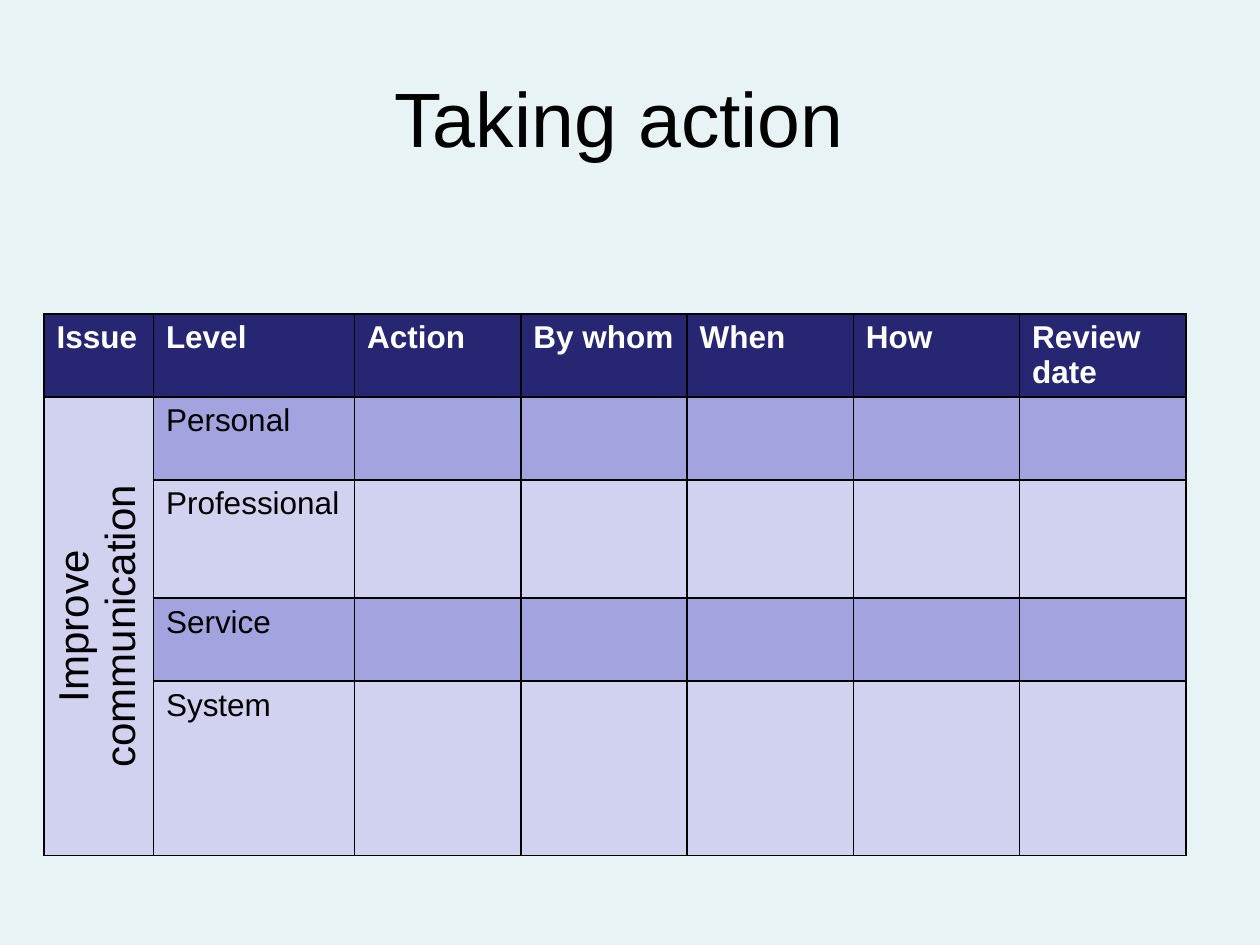
from typing import NamedTuple

from lxml.etree import SubElement
from pptx import Presentation
from pptx.dml.color import RGBColor as RGB
from pptx.enum.text import MSO_ANCHOR as Anchor, PP_ALIGN as Align
from pptx.oxml.ns import qn
from pptx.util import Pt

NAVY, MID, PALE = "262673", "A3A3E0", "D1D1F0"
WIDTHS = [62.5, 115] + [95] * 5
HEADS = ["Issue", "Level", "Action", "By whom", "When", "How", "Review date"]


class Level(NamedTuple):
    name: str
    height: float
    fill: str


LEVELS = [
    Level("Personal", 47.5, MID),
    Level("Professional", 67.5, PALE),
    Level("Service", 47.5, MID),
    Level("System", 99, PALE),
]
HEAD_H = 47.5


def paint(target, color: str) -> None:
    target.solid()
    target.fore_color.rgb = RGB.from_string(color)


def write(frame, text: str, size: float = 18, color: str = "000000",
          bold: bool = False, align=Align.LEFT) -> None:
    frame.text = text
    para = frame.paragraphs[0]
    para.alignment = align
    font = para.runs[0].font if para.runs else para.font
    font.name, font.size, font.bold = "Arial", Pt(size), bold
    paint(font.fill, color)


def frame_cell(cell, fill: str) -> None:
    """Give a cell thin black borders and a plain fill."""
    props = cell._tc.get_or_add_tcPr()
    for side in ("a:lnL", "a:lnR", "a:lnT", "a:lnB"):
        line = SubElement(props, qn(side), w=str(Pt(1)))
        solid = SubElement(line, qn("a:solidFill"))
        SubElement(solid, qn("a:srgbClr"), val="000000")
    paint(cell.fill, fill)


def add_grid(slide) -> None:
    rows = [HEAD_H] + [lev.height for lev in LEVELS]
    grid = slide.shapes.add_table(
        len(rows), len(WIDTHS), Pt(25.2), Pt(179.3),
        Pt(sum(WIDTHS)), Pt(sum(rows))).table
    for col, width in zip(grid.columns, WIDTHS):
        col.width = Pt(width)
    for row, height in zip(grid.rows, rows):
        row.height = Pt(height)

    # Header row
    for c, head in enumerate(HEADS):
        cell = grid.cell(0, c)
        frame_cell(cell, NAVY)
        write(cell.text_frame, head, color="FFFFFF", bold=True)

    # One row for each level, with blanks to fill in
    for r, lev in enumerate(LEVELS, 1):
        for c in range(len(WIDTHS)):
            cell = grid.cell(r, c)
            frame_cell(cell, lev.fill if c else PALE)
            write(cell.text_frame, lev.name if c == 1 else "")

    # Issue, turned upwards beside all levels
    issue = grid.cell(1, 0)
    issue.merge(grid.cell(len(LEVELS), 0))
    write(issue.text_frame, "Improve communication", size=24,
          align=Align.CENTER)
    issue.vertical_anchor = Anchor.MIDDLE
    issue._tc.get_or_add_tcPr().set("vert", "vert270")


def main() -> None:
    deck = Presentation()
    deck.slide_width, deck.slide_height = Pt(720), Pt(540)
    slide = deck.slides.add_slide(deck.slide_layouts[5])
    paint(slide.background.fill, "E7F3F4")

    # Title
    title = slide.shapes.title
    title.left, title.top = Pt(36), Pt(21.6)
    title.width, title.height = Pt(648), Pt(90)
    title.text_frame.vertical_anchor = Anchor.MIDDLE
    write(title.text_frame, "Taking action ", size=44, align=Align.CENTER)

    add_grid(slide)
    deck.save("out.pptx")


if __name__ == "__main__":
    main()
